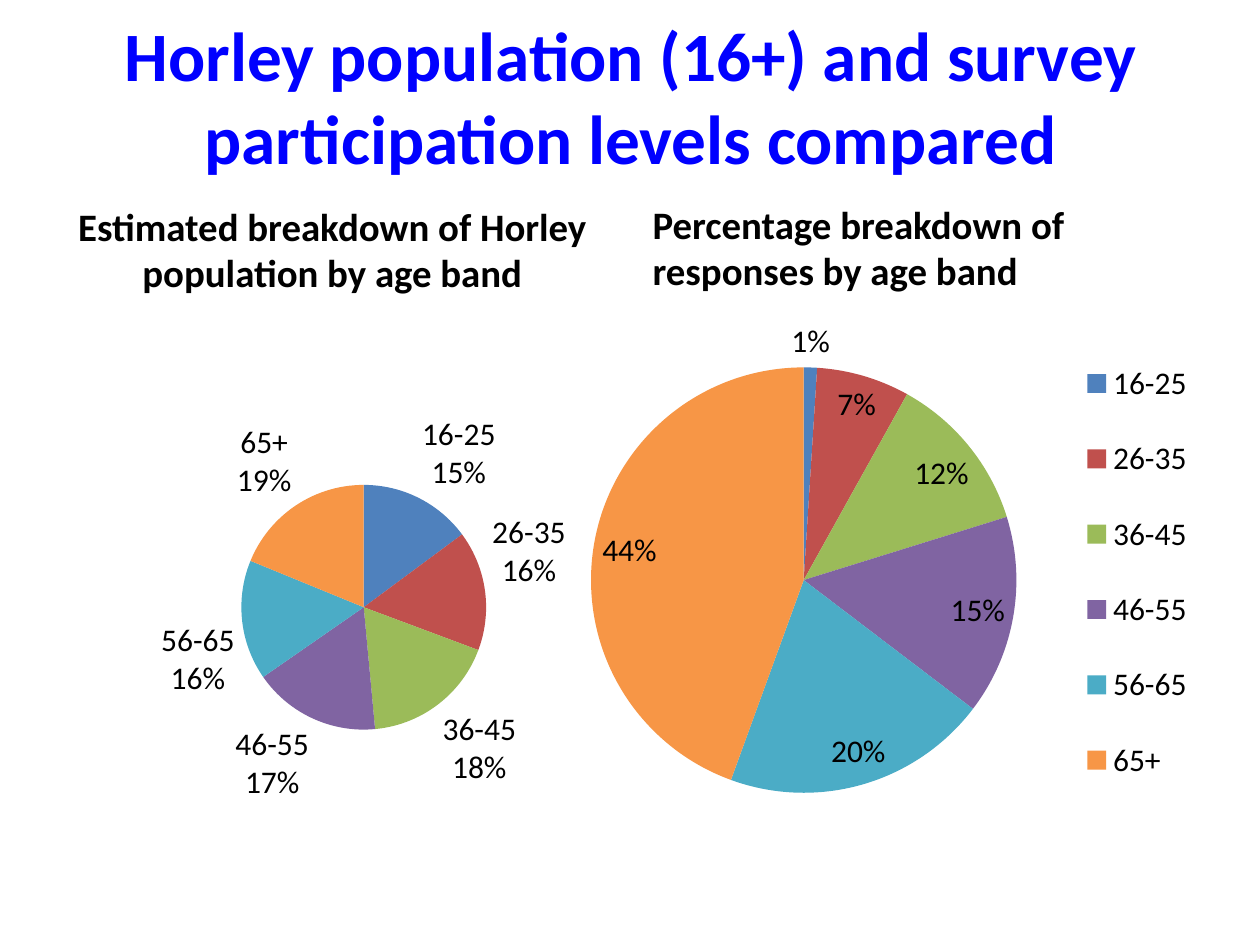
from lxml import etree
from pptx import Presentation
from pptx.chart.data import CategoryChartData
from pptx.dml.color import RGBColor
from pptx.enum.chart import XL_CHART_TYPE, XL_LABEL_POSITION, XL_LEGEND_POSITION
from pptx.enum.text import MSO_ANCHOR, MSO_AUTO_SIZE, PP_ALIGN
from pptx.oxml import parse_xml
from pptx.oxml.ns import nsdecls, qn
from pptx.util import Inches, Pt

PX = Inches(1) / 126
BLUE = RGBColor(0x00, 0x00, 0xFF)
BLACK = RGBColor(0x00, 0x00, 0x00)
SLICE_COLOURS = [
    RGBColor(0x4F, 0x81, 0xBD), RGBColor(0xC0, 0x50, 0x4D),
    RGBColor(0x9B, 0xBB, 0x59), RGBColor(0x80, 0x64, 0xA2),
    RGBColor(0x4B, 0xAC, 0xC6), RGBColor(0xF7, 0x96, 0x46),
]
AGE_BANDS = ["16-25", "26-35", "36-45", "46-55", "56-65", "65+"]


def px(*lengths):
    """Turn pixel lengths into EMU."""
    return [round(length * PX) for length in lengths]


def manual_layout(x, y, width, height, inner=False):
    """Return a c:layout element in fractions of the chart area."""
    target = '<c:layoutTarget val="inner"/>' if inner else ""
    return parse_xml(
        f'<c:layout {nsdecls("c")}><c:manualLayout>{target}'
        '<c:xMode val="edge"/><c:yMode val="edge"/>'
        f'<c:x val="{x}"/><c:y val="{y}"/><c:w val="{width}"/><c:h val="{height}"/>'
        '</c:manualLayout></c:layout>')


deck = Presentation()
deck.slide_width, deck.slide_height = px(1260, 945)
page = deck.slides.add_slide(deck.slide_layouts.get_by_name("Comparison"))
places = {place.placeholder_format.idx: place for place in page.placeholders}

# Title and the two chart headings
headings = [
    (0, "Horley population (16+) and survey participation levels compared",
     (64, 16, 1134, 158), 39.6, BLUE, PP_ALIGN.CENTER, MSO_ANCHOR.MIDDLE),
    (1, "Estimated breakdown of Horley population by age band",
     (54, 214, 557, 88), 22.2, BLACK, PP_ALIGN.CENTER, MSO_ANCHOR.BOTTOM),
    (3, "Percentage breakdown of responses by age band",
     (640, 212, 557, 88), 22.2, BLACK, PP_ALIGN.LEFT, MSO_ANCHOR.BOTTOM),
]
for idx, wording, bounds, size, colour, alignment, anchor in headings:
    box = places[idx]
    box.left, box.top, box.width, box.height = px(*bounds)
    frame = box.text_frame
    frame.text = wording
    frame.word_wrap = True
    frame.auto_size = MSO_AUTO_SIZE.NONE
    frame.vertical_anchor = anchor
    para = frame.paragraphs[0]
    para.alignment = alignment
    font = para.runs[0].font
    font.name, font.size, font.bold = "Calibri", Pt(size), True
    font.color.rgb = colour

# The charts stand in for the content placeholders
for idx in (2, 4):
    holder = places[idx].element
    holder.getparent().remove(holder)

pies = [
    ([15, 16, 18, 17, 16, 19], (63, 300, 557, 544), (0.32, 0.34, 0.44, 0.45),
     True, XL_LABEL_POSITION.OUTSIDE_END),
    ([1, 7, 12, 15, 20, 44], (591, 300, 635, 544), (0, 0.12, 0.67, 0.79),
     False, XL_LABEL_POSITION.BEST_FIT),
]
for shares, bounds, plot_bounds, names_on_slices, label_position in pies:
    data = CategoryChartData()
    data.categories = AGE_BANDS
    data.add_series("Series 1", shares)
    chart = page.shapes.add_chart(XL_CHART_TYPE.PIE, *px(*bounds), data).chart
    chart.has_title = False
    chart.font.name, chart.font.size = "Calibri", Pt(18)
    chart.font.color.rgb = BLACK

    plot = chart.plots[0]
    plot.vary_by_categories = True
    for number, colour in enumerate(SLICE_COLOURS):
        fill = plot.series[0].points[number].format.fill
        fill.solid()
        fill.fore_color.rgb = colour

    plot.has_data_labels = True
    labels = plot.data_labels
    labels.show_value = False
    labels.show_percentage = True
    labels.show_category_name = names_on_slices
    labels.number_format = "0%"
    labels.number_format_is_linked = False
    labels.position = label_position

    plot_area = chart.element.find(".//" + qn("c:plotArea"))
    for layout in plot_area.findall(qn("c:layout")):
        plot_area.remove(layout)
    plot_area.insert(0, manual_layout(*plot_bounds, inner=True))

    chart.has_legend = not names_on_slices
    if names_on_slices:
        separator = etree.Element(qn("c:separator"))
        separator.text = "\n"
        plot_area.find(".//" + qn("c:showBubbleSize")).addnext(separator)
    else:
        legend = chart.legend
        legend.position = XL_LEGEND_POSITION.RIGHT
        legend.include_in_layout = False
        legend_element = chart.element.find(".//" + qn("c:legend"))
        for layout in legend_element.findall(qn("c:layout")):
            legend_element.remove(layout)
        legend_element.find(qn("c:legendPos")).addnext(
            manual_layout(0.74, 0.05, 0.24, 0.9))

deck.save("out.pptx")
